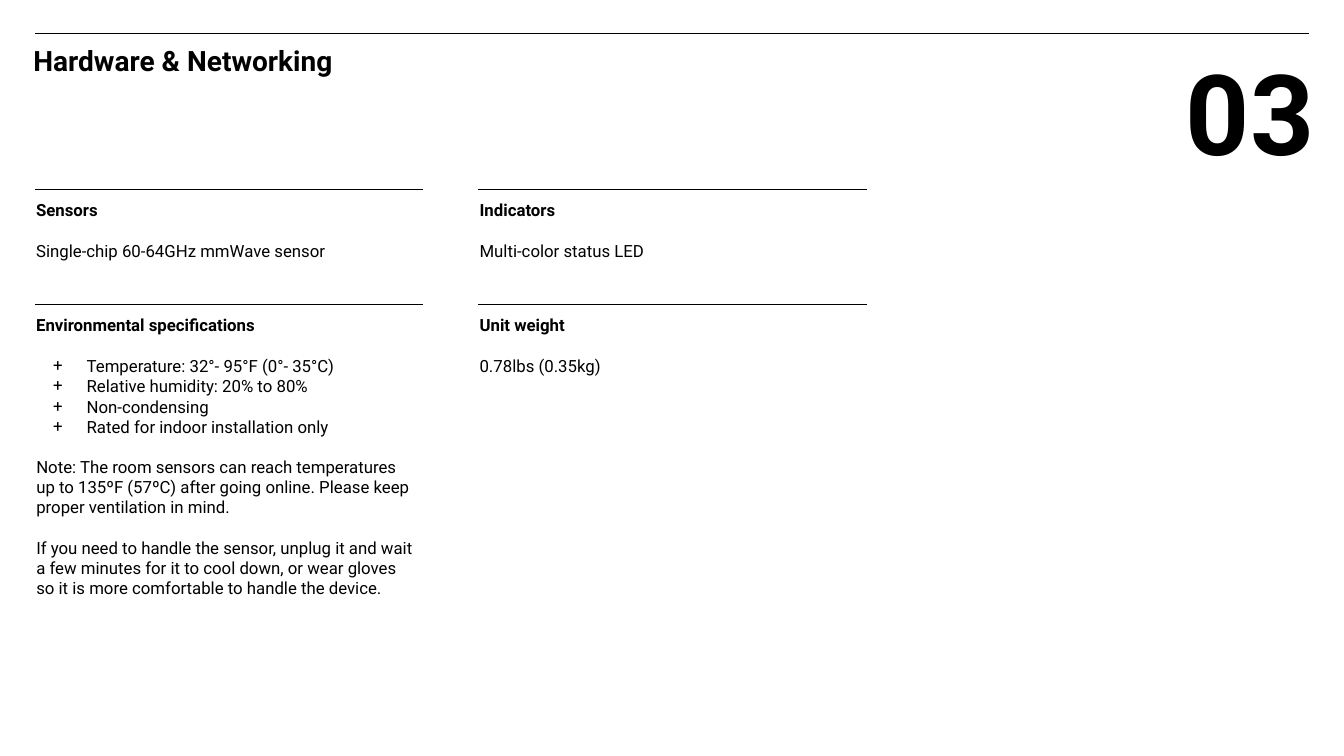
"""Build the Hardware & Networking specification slide."""
from lxml.etree import SubElement
from pptx import Presentation
from pptx.dml.color import RGBColor
from pptx.enum.shapes import MSO_CONNECTOR as Connector
from pptx.enum.text import MSO_ANCHOR as Anchor, MSO_AUTO_SIZE as AutoSize, PP_ALIGN as Align
from pptx.oxml.ns import qn
from pptx.util import Pt

INK = "000000"
INSET = 7.2
LINE_GAP = 14.4
LEFT, TOP = 18.7, 135.4
COLUMN_STEP, ROW_STEP = 316.8, 82.2
BODY_DROP = 29.4
CELL_WIDTH, CELL_HEIGHT = 283.7, 28.8


def add_rule(page, left, right, top):
    """Draw a thin horizontal rule."""
    rule = page.shapes.add_connector(Connector.STRAIGHT, Pt(left), Pt(top), Pt(right), Pt(top))
    rule.line.color.rgb = RGBColor.from_string(INK)
    rule.line.width = Pt(0.75)
    SubElement(rule._element.spPr, qn("a:effectLst"))


def write_text(box, bounds, lines, size, bold=False, align=Align.LEFT):
    """Place a box and fill it with uniformly styled paragraphs."""
    box.left, box.top, box.width, box.height = [Pt(value) for value in bounds]
    frame = box.text_frame
    frame.word_wrap = True
    frame.auto_size = AutoSize.NONE
    frame.vertical_anchor = Anchor.TOP
    frame.margin_left = frame.margin_right = Pt(INSET)
    frame.margin_top = frame.margin_bottom = Pt(INSET)
    frame.text = "\n".join(lines)
    for para in frame.paragraphs:
        para.alignment = align
        para.space_before = Pt(0)
        font = para.font
        font.name, font.size, font.bold = "Roboto", Pt(size), bold
        font.color.rgb = RGBColor.from_string(INK)


conditions = [
    "Temperature: 32°- 95°F (0°- 35°C)",
    "Relative humidity: 20% to 80%",
    "Non-condensing",
    "Rated for indoor installation only",
]
notes = [
    "Note: The room sensors can reach temperatures up to 135ºF (57ºC) after going online. "
    "Please keep proper ventilation in mind.",
    "If you need to handle the sensor, unplug it and wait a few minutes for it to cool down, "
    "or wear gloves so it is more comfortable to handle the device.",
]
sections = [
    (0, 0, "Sensors", "Single-chip 60-64GHz mmWave sensor"),
    (1, 0, "Indicators", "Multi-color status LED"),
    (0, 1, "Environmental specifications", None),
    (1, 1, "Unit weight", "0.78lbs (0.35kg)"),
]

deck = Presentation()
deck.slide_width, deck.slide_height = Pt(960), Pt(540)
page = deck.slides.add_slide(deck.slide_layouts[1])
title, details = page.placeholders

add_rule(page, 25.2, 935.3, 23.8)
write_text(title, (16.6, 23.8, 463, 38.9), ["Hardware & Networking"], 20, True)
number = page.shapes.add_textbox(0, 0, 0, 0)
write_text(number, (794.9, 23.8, 151.2, 111.6), ["03"], 80, True, Align.RIGHT)

for column, row, heading, text in sections:
    left, top = LEFT + column * COLUMN_STEP, TOP + row * ROW_STEP
    add_rule(page, left + 6.3, left + CELL_WIDTH, top)
    heading_box = page.shapes.add_textbox(0, 0, 0, 0)
    write_text(heading_box, (left, top, CELL_WIDTH, CELL_HEIGHT), [heading], 12, True)
    if text:
        text_box = page.shapes.add_textbox(0, 0, 0, 0)
        write_text(text_box, (left, top + BODY_DROP, CELL_WIDTH, CELL_HEIGHT), [text], 12)
    else:
        write_text(details, (left, top + BODY_DROP, CELL_WIDTH, 203.8), conditions + notes, 12)

for index, para in enumerate(details.text_frame.paragraphs):
    properties = para._p.get_or_add_pPr()
    if index < len(conditions):
        properties.set("marL", str(Pt(36)))
        properties.set("indent", str(Pt(-24)))
        color = SubElement(properties, qn("a:buClr"))
        SubElement(color, qn("a:srgbClr"), val=INK)
        SubElement(properties, qn("a:buFont"), typeface="Roboto")
        SubElement(properties, qn("a:buChar"), char="+")
    else:
        para.space_before = Pt(LINE_GAP)
        properties.set("marL", "0")
        properties.set("indent", "0")
        SubElement(properties, qn("a:buNone"))
    properties.append(properties.find(qn("a:defRPr")))

deck.save("out.pptx")
